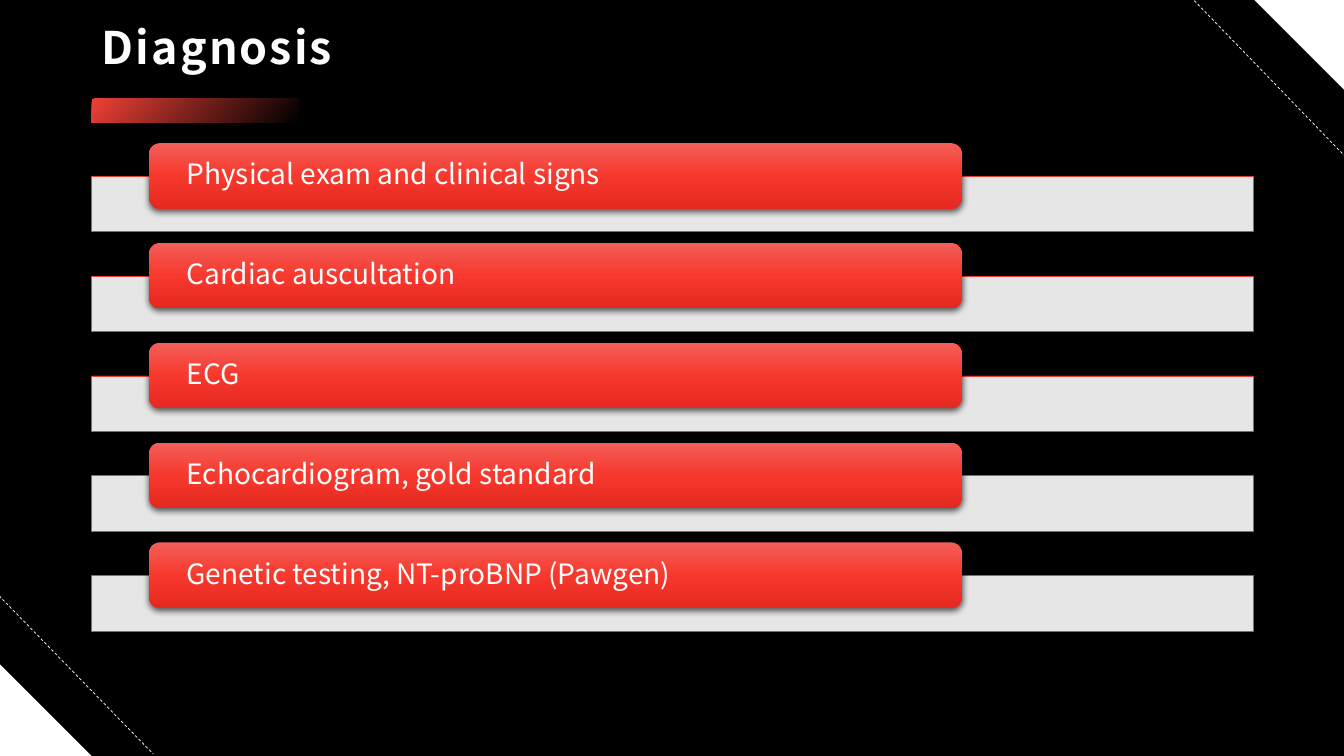
from lxml import etree
from pptx import Presentation
from pptx.dml.color import RGBColor
from pptx.enum.dml import MSO_LINE
from pptx.enum.shapes import MSO_CONNECTOR, MSO_SHAPE
from pptx.enum.text import MSO_ANCHOR, MSO_AUTO_SIZE, PP_ALIGN
from pptx.oxml import parse_xml
from pptx.oxml.ns import qn
from pptx.util import Inches, Pt

RECTANGLE = MSO_SHAPE.RECTANGLE
ROUNDED = MSO_SHAPE.ROUNDED_RECTANGLE
TRIANGLE = MSO_SHAPE.RIGHT_TRIANGLE
STRAIGHT = MSO_CONNECTOR.STRAIGHT
DASH = MSO_LINE.DASH
MIDDLE = MSO_ANCHOR.MIDDLE
NO_FIT = MSO_AUTO_SIZE.NONE
LEFT = PP_ALIGN.LEFT

BLACK, WHITE, RED = "000000", "FFFFFF", "EE4036"
CARD_STOPS = [(0, "F25F59"), (50, "F7382D"), (100, "E5291F")]
TITLE_FORMAT = {"name": "Noto Sans CJK TC", "size": Pt(32), "bold": True}
CARD_FORMAT = {"name": "Noto Sans CJK JP", "size": Pt(20), "bold": False}
METHODS = [
    "Physical exam and clinical signs",
    "Cardiac auscultation",
    "ECG",
    "Echocardiogram, gold standard",
    "Genetic testing, NT-proBNP (Pawgen)",
]
FIRST_TOP, PITCH = 1.42, 0.99
SHADOW = (
    '<a:effectLst xmlns:a="http://schemas.openxmlformats.org/drawingml/2006/main">'
    '<a:outerShdw blurRad="57150" dist="19050" dir="5400000" algn="ctr" rotWithShape="0">'
    '<a:srgbClr val="000000"><a:alpha val="63000"/></a:srgbClr>'
    "</a:outerShdw></a:effectLst>"
)


def color(value):
    return RGBColor.from_string(value)


def add_box(slide, kind, left, top, width, height, fill=None):
    """Add a preset shape without outline or shadow."""
    box = slide.shapes.add_shape(
        kind, Inches(left), Inches(top), Inches(width), Inches(height))
    box.shadow.inherit = False
    box.line.fill.background()
    if fill:
        box.fill.solid()
        box.fill.fore_color.rgb = color(fill)
    return box


def set_gradient(box, stops, angle):
    """Fill with the given stops; the angle runs clockwise."""
    box.fill.gradient()
    box.fill.gradient_angle = (360 - angle) % 360
    stop_list = box._element.spPr.find(".//" + qn("a:gsLst"))
    for stop in list(stop_list):
        stop_list.remove(stop)
    for position, value in stops:
        stop = etree.SubElement(stop_list, qn("a:gs"), pos=str(position * 1000))
        etree.SubElement(stop, qn("a:srgbClr"), val=value)


def write_text(shape, text, formats, inset):
    """Write one left-aligned, vertically centred white line."""
    frame = shape.text_frame
    frame.word_wrap = True
    frame.auto_size = NO_FIT
    frame.vertical_anchor = MIDDLE
    frame.margin_left = frame.margin_right = Inches(inset)
    frame.margin_top = frame.margin_bottom = 0
    para = frame.paragraphs[0]
    para.alignment = LEFT
    para.line_spacing = 0.9
    span = para.add_run()
    span.text = text
    for name, value in formats.items():
        setattr(span.font, name, value)
    span.font.color.rgb = color(WHITE)
    properties = span.font._element
    etree.SubElement(properties, qn("a:ea"), typeface=formats["name"])
    return span


def add_dashed_line(slide, left, top, right, bottom):
    line = slide.shapes.add_connector(
        STRAIGHT, Inches(left), Inches(top), Inches(right), Inches(bottom))
    line.line.color.rgb = color(WHITE)
    line.line.width = Pt(0.5)
    line.line.dash_style = DASH
    etree.SubElement(line._element.spPr, qn("a:effectLst"))


def add_corners(slide):
    add_box(slide, TRIANGLE, 0, 6.59, 0.91, 0.91, WHITE)
    add_box(slide, TRIANGLE, 12.43, -0.01, 0.91, 0.91, WHITE).rotation = 180
    add_dashed_line(slide, -0.01, 5.91, 1.52, 7.48)
    add_dashed_line(slide, 11.81, -0.03, 13.34, 1.55)


def add_title(slide):
    title = slide.shapes.title
    title.left, title.top = Inches(0.91), Inches(0.18)
    title.width, title.height = Inches(11.51), Inches(0.64)
    span = write_text(title, "Diagnosis", TITLE_FORMAT, 0.1)
    span.font._element.set("spc", "150")
    accent = add_box(slide, RECTANGLE, 0.91, 0.98, 2.05, 0.24)
    set_gradient(accent, [(0, RED), (100, BLACK)], 40)


def add_method(slide, text, top):
    """Add a pale bar with a red card over its upper edge."""
    bar = add_box(slide, RECTANGLE, 0.91, top + 0.33, 11.52, 0.55, WHITE)
    fill_color = bar._element.spPr.find(qn("a:solidFill") + "/" + qn("a:srgbClr"))
    etree.SubElement(fill_color, qn("a:alpha"), val="90000")
    bar.line.color.rgb = color(RED)
    bar.line.width = Pt(0.5)

    card = add_box(slide, ROUNDED, 1.48, top, 8.06, 0.65)
    set_gradient(card, CARD_STOPS, 90)
    properties = card._element.spPr
    properties.replace(properties.find(qn("a:effectLst")), parse_xml(SHADOW))
    write_text(card, text, CARD_FORMAT, 0.34)


def main():
    deck = Presentation()
    deck.slide_width, deck.slide_height = Inches(13.33), Inches(7.5)
    page = deck.slides.add_slide(deck.slide_layouts[5])
    page.background.fill.solid()
    page.background.fill.fore_color.rgb = color(BLACK)

    add_corners(page)
    add_title(page)
    for row, text in enumerate(METHODS):
        add_method(page, text, FIRST_TOP + row * PITCH)
    deck.save("out.pptx")


if __name__ == "__main__":
    main()
